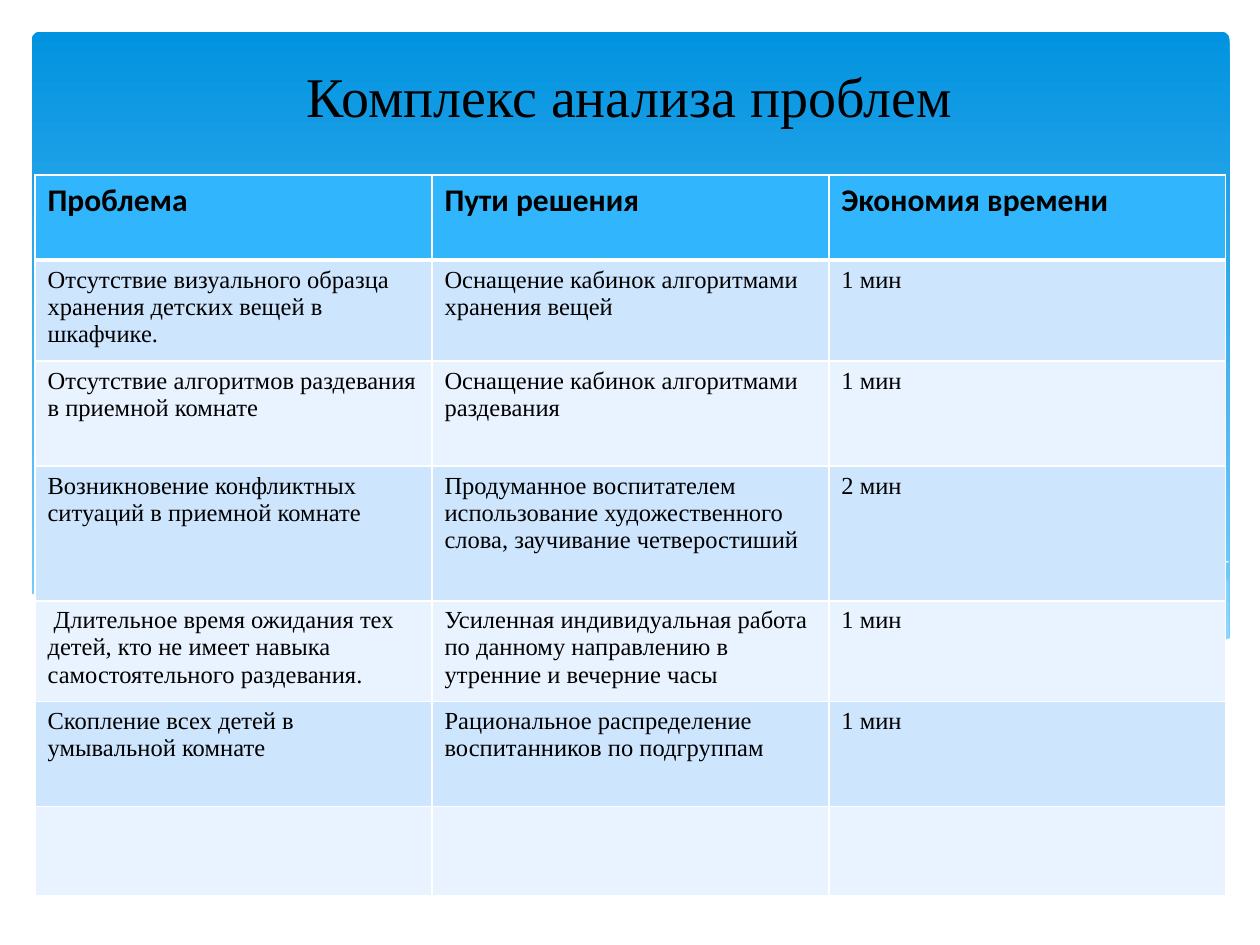
from dataclasses import dataclass
from typing import Optional

from lxml.etree import SubElement
from pptx import Presentation
from pptx.dml.color import RGBColor
from pptx.enum.shapes import MSO_SHAPE
from pptx.enum.text import MSO_ANCHOR, PP_ALIGN
from pptx.oxml.ns import qn
from pptx.util import Pt

WHITE = RGBColor(0xFF, 0xFF, 0xFF)
BLACK = RGBColor(0x00, 0x00, 0x00)
SKY_TOP = RGBColor(0x02, 0x93, 0xE0)
SKY_BOTTOM = RGBColor(0x83, 0xD3, 0xFE)
WAVE_BLUE = RGBColor(0xC6, 0xE7, 0xFC)
HEADER_BLUE = RGBColor(0x31, 0xB6, 0xFD)
BAND_DARK = RGBColor(0xCE, 0xE5, 0xFE)
BAND_LIGHT = RGBColor(0xE8, 0xF3, 0xFF)
SERIF = "Times New Roman"
SANS = "Calibri"


@dataclass(frozen=True)
class Wave:
    points: list[tuple[float, float]]
    fill: Optional[RGBColor] = None
    opacity: int = 100


@dataclass(frozen=True)
class Row:
    height: float
    texts: tuple[str, str, str]


WAVES = [
    Wave([(702, 331), (673, 336), (641.5, 342.5), (599, 353), (542, 366), (476, 378),
          (508, 382), (545, 386), (586, 387.5), (621, 385), (652, 381), (678, 374),
          (702.5, 365)], WAVE_BLUE, 29),
    Wave([(643, 384), (581, 374), (533.5, 366), (453, 347), (400, 335), (352, 327),
          (302, 322), (260, 321), (206, 325.5), (246, 330.5), (323, 347), (382, 361),
          (433, 371), (490, 380), (539, 386), (581, 388), (617, 387)], WAVE_BLUE, 40),
    Wave([(222.5, 328), (248, 324), (289, 322), (338, 323), (384, 327), (438, 334),
          (500, 345), (572, 361.5), (653, 383)]),
    Wave([(441, 372), (500, 357), (559, 343.5), (623.5, 330.5), (665, 324), (702, 321)]),
    Wave([(703.5, 364.5), (677, 374), (647, 381.5), (612, 385), (571, 386.5), (523, 383),
          (466.5, 376), (400, 363.5), (322, 345.5), (263, 332.5), (210, 324.5),
          (165.5, 320.5), (127.5, 319.5), (85.5, 322.5), (54.5, 327.5), (29, 335),
          (16.5, 340.5), (16.5, 424), (703.5, 424)], WHITE),
]

ROWS = [
    Row(48.6, ("Проблема", "Пути решения", "Экономия времени")),
    Row(56, ("Отсутствие визуального образца хранения детских вещей в шкафчике.",
             "Оснащение кабинок алгоритмами хранения вещей", "1 мин")),
    Row(60, ("Отсутствие алгоритмов раздевания в приемной комнате",
             "Оснащение кабинок алгоритмами раздевания", "1 мин")),
    Row(77.1, ("Возникновение конфликтных ситуаций в приемной комнате",
               "Продуманное воспитателем использование художественного слова, "
               "заучивание четверостиший", "2 мин")),
    Row(53.7, (" Длительное время ожидания тех детей, кто не имеет навыка "
               "самостоятельного раздевания.",
               "Усиленная индивидуальная работа по данному направлению в утренние "
               "и вечерние часы", "1 мин")),
    Row(60, ("Скопление всех детей в умывальной комнате",
             "Рациональное распределение воспитанников по подгруппам", "1 мин")),
    Row(50.8, ("", "", "")),
]


def write_text(frame, text: str, *, size: float, font: str = SERIF, bold: bool = False,
               align: PP_ALIGN = PP_ALIGN.LEFT) -> None:
    para = frame.paragraphs[0]
    para.alignment = align
    if not text:
        return
    span = para.add_run()
    span.text = text
    span.font.size = Pt(size)
    span.font.name = font
    span.font.bold = bold
    span.font.color.rgb = BLACK


def draw_sky(page) -> None:
    sky = page.shapes.add_shape(MSO_SHAPE.ROUNDED_RECTANGLE,
                                Pt(18), Pt(18), Pt(684.7), Pt(373))
    sky.adjustments[0] = 0.013
    sky.shadow.inherit = False
    sky.line.fill.background()
    sky.fill.gradient()
    sky.fill.gradient_angle = 270
    for stop, position, color in zip(sky.fill.gradient_stops, (0, 1), (SKY_TOP, SKY_BOTTOM)):
        stop.position = position
        stop.color.rgb = color


def draw_wave(page, wave: Wave) -> None:
    """A wave with a fill is a closed area; one without is a thin white line."""
    start, *rest = [(Pt(x), Pt(y)) for x, y in wave.points]
    builder = page.shapes.build_freeform(*start)
    builder.add_line_segments(rest, close=wave.fill is not None)
    shape = builder.convert_to_shape()
    shape.shadow.inherit = False
    if wave.fill is None:
        shape.fill.background()
        shape.line.color.rgb = WHITE
        shape.line.width = Pt(0)
        return
    shape.line.fill.background()
    shape.fill.solid()
    shape.fill.fore_color.rgb = wave.fill
    if wave.opacity < 100:
        color = shape.fill._xPr.find(qn("a:solidFill")).find(qn("a:srgbClr"))
        SubElement(color, qn("a:alpha"), val=str(wave.opacity * 1000))


def draw_title(page) -> None:
    box = page.shapes.add_textbox(Pt(31), Pt(31.7), Pt(657.4), Pt(45.4))
    box.text_frame.word_wrap = True
    box.text_frame.vertical_anchor = MSO_ANCHOR.BOTTOM
    write_text(box.text_frame, "Комплекс анализа проблем", size=32, align=PP_ALIGN.CENTER)


def set_borders(cell, top: float, bottom: float) -> None:
    properties = cell._tc.get_or_add_tcPr()
    for side, width in (("L", 1), ("R", 1), ("T", top), ("B", bottom)):
        line = SubElement(properties, qn(f"a:ln{side}"), w=str(Pt(width)))
        fill = SubElement(line, qn("a:solidFill"))
        SubElement(fill, qn("a:srgbClr"), val=str(WHITE))


def draw_table(page) -> None:
    height = sum(row.height for row in ROWS)
    table = page.shapes.add_table(len(ROWS), 3, Pt(20), Pt(100), Pt(680.4), Pt(height)).table
    for column in table.columns:
        column.width = Pt(226.8)
    for index, row in enumerate(ROWS):
        table.rows[index].height = Pt(row.height)
        header = index == 0
        color = HEADER_BLUE if header else (BAND_LIGHT, BAND_DARK)[index % 2]
        for cell, text in zip(table.rows[index].cells, row.texts):
            set_borders(cell, top=3 if index == 1 else 1, bottom=3 if header else 1)
            cell.fill.solid()
            cell.fill.fore_color.rgb = color
            write_text(cell.text_frame, text, size=18 if header else 14,
                       font=SANS if header else SERIF, bold=header)


def main() -> None:
    deck = Presentation()
    deck.slide_width, deck.slide_height = Pt(720), Pt(540)
    page = deck.slides.add_slide(deck.slide_layouts[6])
    draw_sky(page)
    for wave in WAVES:
        draw_wave(page, wave)
    draw_title(page)
    draw_table(page)
    deck.save("out.pptx")


if __name__ == "__main__":
    main()
